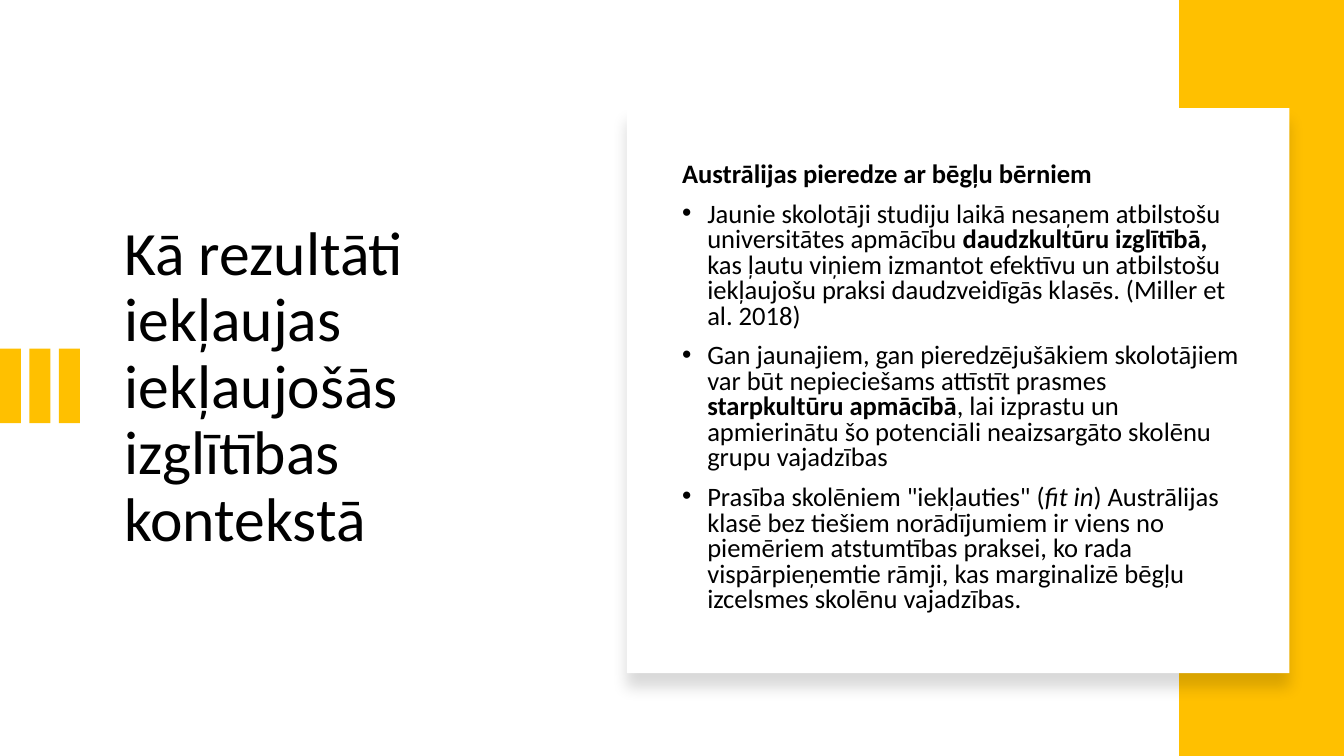
import pptx
import pptx.dml.color
import pptx.enum.shapes
import pptx.enum.text
import pptx.oxml.ns
import pptx.util
from lxml import etree

PX = 9525  # EMU per px, 96 px to the inch
FONT = "Calibri"
BLACK, WHITE, AMBER = "000000", "FFFFFF", "FFC000"
INDENT = 24

TITLE = "Kā rezultāti iekļaujas iekļaujošās izglītības kontekstā"
HEADING = "Austrālijas pieredze ar bēgļu bērniem"
# Each point is a list of (text, style) runs
POINTS = [
    [("Jaunie skolotāji studiju laikā nesaņem atbilstošu universitātes apmācību ", ""),
     ("daudzkultūru izglītībā, ", "bold"),
     ("kas ļautu viņiem izmantot efektīvu un atbilstošu iekļaujošu praksi "
      "daudzveidīgās klasēs. (Miller et al. 2018)", "")],
    [("Gan jaunajiem, gan pieredzējušākiem skolotājiem var būt nepieciešams "
      "attīstīt prasmes ", ""),
     ("starpkultūru apmācībā", "bold"),
     (", lai izprastu un apmierinātu šo potenciāli neaizsargāto skolēnu grupu "
      "vajadzības", "")],
    [('Prasība skolēniem "iekļauties" (', ""),
     ("fit in", "italic"),
     (") Austrālijas klasē bez tiešiem norādījumiem ir viens no piemēriem "
      "atstumtības praksei, ko rada vispārpieņemtie rāmji, kas marginalizē bēgļu "
      "izcelsmes skolēnu vajadzības.", "")],
]


def px(length):
    return pptx.util.Emu(length * PX)


def color(hex_string):
    return pptx.dml.color.RGBColor.from_string(hex_string)


def add_block(slide, left, top, width, height, fill):
    block = slide.shapes.add_shape(
        pptx.enum.shapes.MSO_SHAPE.RECTANGLE,
        px(left), px(top), px(width), px(height))
    block.fill.solid()
    block.fill.fore_color.rgb = color(fill)
    block.line.fill.background()
    block.shadow.inherit = False
    return block


def add_soft_shadow(block):
    qn = pptx.oxml.ns.qn
    effects = block.element.spPr.find(qn("a:effectLst"))
    shadow = etree.SubElement(
        effects, qn("a:outerShdw"), blurRad=str(pptx.util.Pt(11)),
        dist=str(pptx.util.Pt(10)), dir="5400000", algn="t", rotWithShape="0")
    tone = etree.SubElement(shadow, qn("a:srgbClr"), val=BLACK)
    etree.SubElement(tone, qn("a:alpha"), val="15000")


def place_text(placeholder, left, top, width, height):
    placeholder.left, placeholder.top = px(left), px(top)
    placeholder.width, placeholder.height = px(width), px(height)
    frame = placeholder.text_frame
    frame.word_wrap = True
    frame.auto_size = pptx.enum.text.MSO_AUTO_SIZE.NONE
    frame.vertical_anchor = pptx.enum.text.MSO_ANCHOR.MIDDLE
    return frame


def format_paragraph(paragraph, size, line_spacing, space_before):
    paragraph.alignment = pptx.enum.text.PP_ALIGN.LEFT
    paragraph.line_spacing = line_spacing
    paragraph.space_before = pptx.util.Pt(space_before)
    paragraph.font.name = FONT
    paragraph.font.size = pptx.util.Pt(size)
    paragraph.font.color.rgb = color(BLACK)


def set_bullet(paragraph, char=None):
    qn = pptx.oxml.ns.qn
    properties = paragraph._p.get_or_add_pPr()
    indent = INDENT * PX if char else 0
    properties.set("marL", str(indent))
    properties.set("indent", str(-indent))
    if char:
        etree.SubElement(properties, qn("a:buFont"), typeface="Arial")
        etree.SubElement(properties, qn("a:buChar"), char=char)
    else:
        etree.SubElement(properties, qn("a:buNone"))


def add_point(frame, runs):
    paragraph = frame.add_paragraph()
    set_bullet(paragraph, "•")
    format_paragraph(paragraph, 19, 0.8, 10)
    for text, style in runs:
        run = paragraph.add_run()
        run.text = text
        if style == "bold":
            run.font.bold = True
        elif style == "italic":
            run.font.italic = True


def main():
    deck = pptx.Presentation()
    deck.slide_width, deck.slide_height = px(1280), px(720)
    slide = deck.slides.add_slide(deck.slide_layouts[1])

    # Title on the left
    title = place_text(slide.shapes.title, 109, 140, 409, 460)
    title.text = TITLE
    format_paragraph(title.paragraphs[0], 44, 0.9, 0)

    # Three accent bars at the left edge
    for index in range(3):
        add_block(slide, index * 28, 332, 20, 71, AMBER)

    # Amber band and the white card over it
    add_block(slide, 1123, 0, 157, 720, AMBER)
    card = add_block(slide, 597, 103, 631, 538, WHITE)
    add_soft_shadow(card)

    # Heading and points, brought in front of the card
    points = slide.placeholders[1]
    slide.shapes._spTree.append(points.element)
    frame = place_text(points, 640, 140, 552, 460)
    heading = frame.paragraphs[0]
    heading.text = HEADING
    set_bullet(heading)
    format_paragraph(heading, 19, 0.8, 10)
    heading.font.bold = True
    for runs in POINTS:
        add_point(frame, runs)

    deck.save("out.pptx")


if __name__ == "__main__":
    main()
